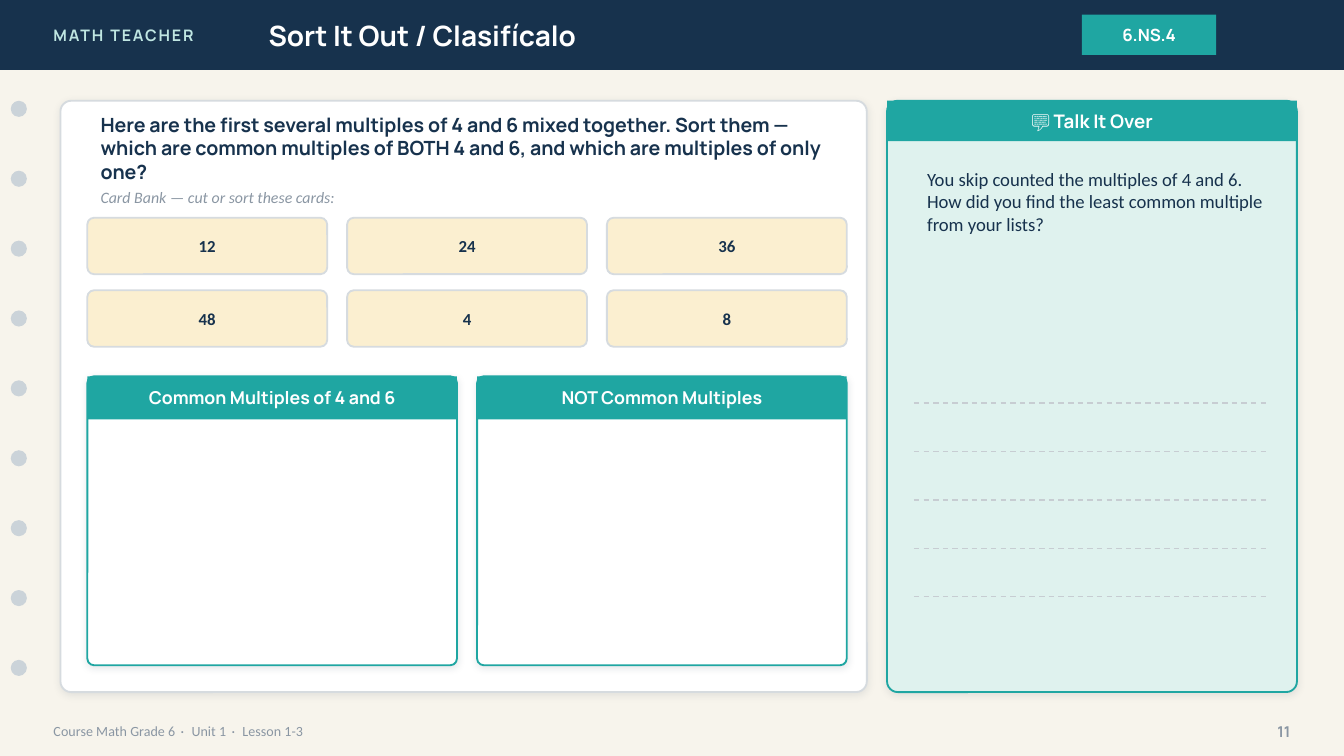
from lxml import etree
from pptx import Presentation
from pptx.dml.color import RGBColor
from pptx.enum.dml import MSO_LINE
from pptx.enum.shapes import MSO_CONNECTOR, MSO_SHAPE
from pptx.enum.text import MSO_ANCHOR, PP_ALIGN
from pptx.oxml.ns import qn
from pptx.util import Inches, Pt

RECT, ROUND, OVAL = MSO_SHAPE.RECTANGLE, MSO_SHAPE.ROUNDED_RECTANGLE, MSO_SHAPE.OVAL
LEFT, MID, RIGHT = PP_ALIGN.LEFT, PP_ALIGN.CENTER, PP_ALIGN.RIGHT
TOP, HALF = MSO_ANCHOR.TOP, MSO_ANCHOR.MIDDLE
STRAIGHT, DASH = MSO_CONNECTOR.STRAIGHT, MSO_LINE.DASH

THEME = {
    "color": {
        "page": "F7F4EC", "navy": "17324D", "mint": "BFE6E2", "white": "FFFFFF",
        "teal": "1FA6A2", "dot": "CBD3D9", "gray": "8A96A3", "edge": "D6DBDF",
        "card": "FBEFD0", "pale": "DFF2EE", "dash": "C7CDD2", "shade": "1C2E42",
    },
    "style": {
        "brand": ("Manrope", 8.5, "mint", True, False),
        "title": ("Manrope", 15, "white", True, False),
        "code": ("Manrope", 9, "white", True, False),
        "foot": ("Calibri", 7.5, "gray", False, False),
        "page": ("Manrope", 8, "gray", True, False),
        "task": ("Manrope", 10.5, "navy", True, False),
        "hint": ("Calibri", 8.5, "gray", False, True),
        "card": ("Calibri", 9, "navy", True, False),
        "head": ("Manrope", 9.5, "white", True, False),
        "talk": ("Manrope", 10, "white", True, False),
        "body": ("Calibri", 10, "navy", False, False),
    },
}
HUE = {name: RGBColor.from_string(code) for name, code in THEME["color"].items()}
CELL = Inches(0.1)
WIDE, HIGH = 100, 56.25

deck = Presentation()
deck.slide_width, deck.slide_height = int(WIDE * CELL), int(HIGH * CELL)
slide = deck.slides.add_slide(deck.slide_layouts[6])
slide.background.fill.solid()
slide.background.fill.fore_color.rgb = HUE["page"]


def draw(kind, area, fill, edge=None, curve=None, shade=False):
    shape = slide.shapes.add_shape(kind, *(int(n * CELL) for n in area))
    shape.fill.solid()
    shape.fill.fore_color.rgb = HUE[fill]
    if edge:
        shape.line.color.rgb = HUE[edge]
        shape.line.width = Pt(1)
    else:
        shape.line.fill.background()
    if curve:
        shape.adjustments[0] = curve / min(area[2:])
    shape.shadow.inherit = False
    if shade:
        glow = etree.SubElement(
            shape._element.spPr.find(qn("a:effectLst")), qn("a:outerShdw"),
            blurRad=str(Pt(4)), dist=str(Pt(1)), dir="5400000", algn="ctr", rotWithShape="0")
        tint = etree.SubElement(glow, qn("a:srgbClr"), val=THEME["color"]["shade"])
        etree.SubElement(tint, qn("a:alpha"), val="10000")
    return shape


def write(place, runs, style, align=LEFT, anchor=HALF):
    if isinstance(place, tuple):
        place = slide.shapes.add_textbox(*(int(n * CELL) for n in place))
    frame = place.text_frame
    frame.word_wrap = True
    frame.vertical_anchor = anchor
    line = frame.paragraphs[0]
    line.alignment = align
    face, size, hue, bold, slant = THEME["style"][style]
    for text, gap in runs:
        run = line.add_run()
        run.text = text
        font = run.font
        font.name, font.size, font.bold, font.italic = face, Pt(size), bold, slant
        font.color.rgb = HUE[hue]
        if gap:
            run._r.get_or_add_rPr().set("spc", str(gap))


draw(RECT, (0, 0, WIDE, 5.2), "navy")
write((3, 0, 24, 5.2), [("MATH TEACHER", 100)], "brand")
write((19, 0, 56, 5.2), [("Sort It Out / Clasifícalo", 0)], "title")
write(draw(RECT, (80.5, 1.1, 10, 3), "teal"), [("6.NS.4", 0)], "code", MID)

for row in range(9):
    draw(OVAL, (0.8, 7.5 + row * 5.2, 1.2, 1.2), "dot")

write((3, 53, 70, 2.8), [("Course Math Grade 6", 0), (" · ", 110), ("Unit 1", 0),
                         (" · ", 110), ("Lesson 1-3", 0)], "foot")
write((92, 53, 5, 2.8), [("11", 0)], "page", RIGHT)

draw(ROUND, (4.5, 7.5, 60, 44), "white", "edge", 0.8, True)
write((6.5, 9, 56, 4), [(
    "Here are the first several multiples of 4 and 6 mixed together. Sort them — "
    "which are common multiples of BOTH 4 and 6, and which are multiples of only one?", 0)], "task")
write((6.5, 13.5, 56, 2.4), [("Card Bank — cut or sort these cards:", 0)], "hint")

for spot, label in enumerate(["12", "24", "36", "48", "4", "8"]):
    row, col = divmod(spot, 3)
    card = draw(ROUND, (6.5 + col * 19.33, 16.2 + row * 5.4, 17.85, 4.2), "card", "edge", 0.5)
    write(card, [(label, 0)], "card", MID)

for col, label in enumerate(["Common Multiples of 4 and 6", "NOT Common Multiples"]):
    left = 6.5 + col * 29
    draw(ROUND, (left, 28, 27.5, 21.5), "white", "teal", 0.5, True)
    write(draw(RECT, (left, 28, 27.5, 3.2), "teal"), [(label, 0)], "head", MID)

draw(ROUND, (66, 7.5, 30.5, 44), "pale", "teal", 0.8, True)
write(draw(RECT, (66, 7.5, 30.5, 3), "teal"), [("💬 Talk It Over", 0)], "talk", MID)
write((68, 12, 27, 15), [(
    "You skip counted the multiples of 4 and 6. "
    "How did you find the least common multiple from your lists?", 0)], "body", anchor=TOP)

for row in range(5):
    high = 30 + row * 3.6
    rule = slide.shapes.add_connector(STRAIGHT, *(int(n * CELL) for n in (68, high, 94.5, high)))
    rule.line.color.rgb = HUE["dash"]
    rule.line.width = Pt(0.75)
    rule.line.dash_style = DASH
    etree.SubElement(rule._element.spPr, qn("a:effectLst"))

deck.save("out.pptx")
